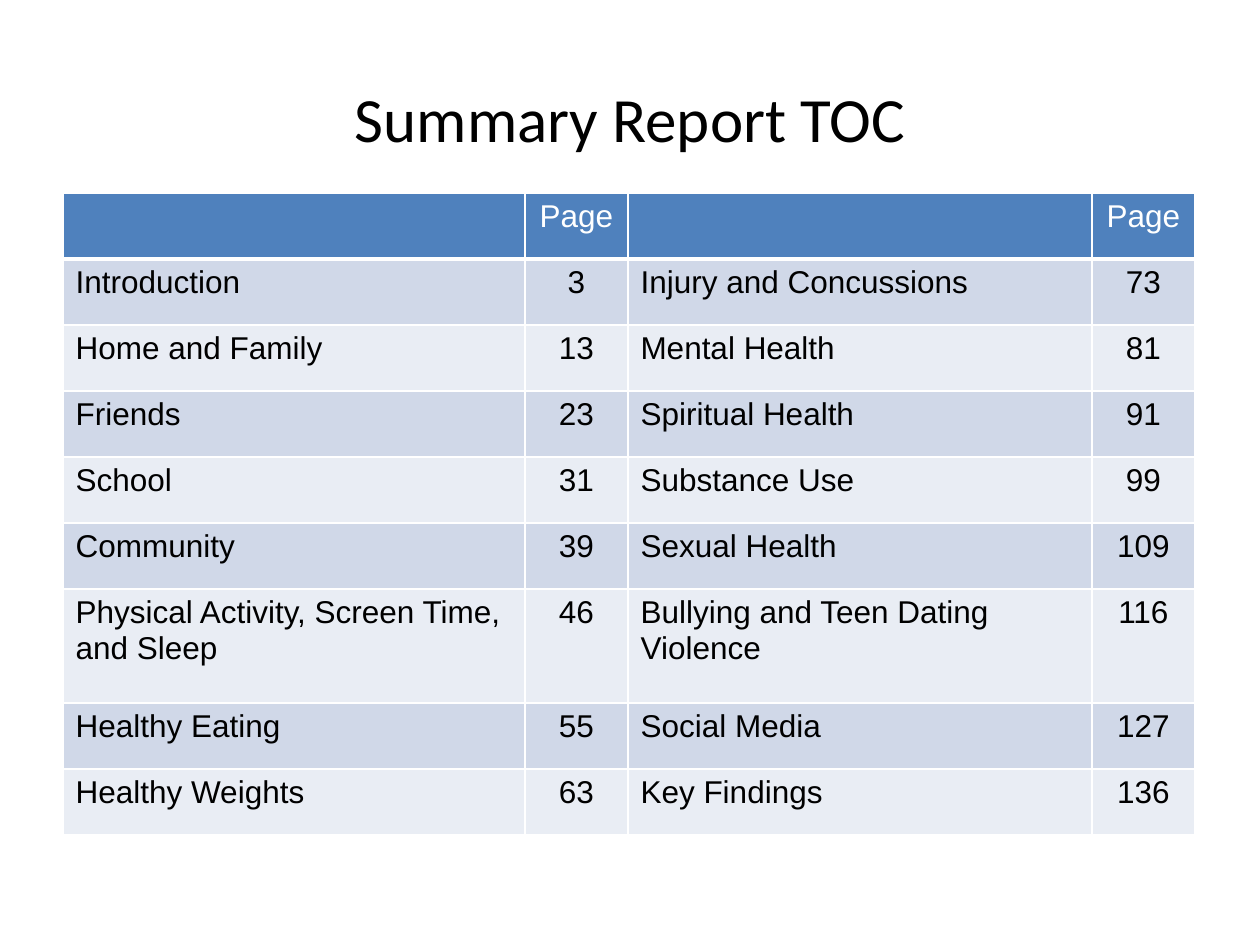
import pptx
import pptx.util
import pptx.dml.color
import pptx.enum.text
import pptx.oxml
import pptx.oxml.ns

RGB = pptx.dml.color.RGBColor
ALIGN = pptx.enum.text.PP_ALIGN
BLACK = RGB(0x00, 0x00, 0x00)
WHITE = RGB(0xFF, 0xFF, 0xFF)
BLUE = RGB(0x4F, 0x81, 0xBD)
BANDS = [RGB(0xD0, 0xD8, 0xE8), RGB(0xE9, 0xED, 0xF4)]

SCALE = 914400 / 126  # EMU in one px

COLS = [462, 103, 464, 103]
ROW = 66
TALL = 114
ROWS = [
    ("", "Page", "", "Page"),
    ("Introduction", "3", "Injury and Concussions", "73"),
    ("Home and Family", "13", "Mental Health", "81"),
    ("Friends", "23", "Spiritual Health", "91"),
    ("School", "31", "Substance Use", "99"),
    ("Community", "39", "Sexual Health", "109"),
    ("Physical Activity, Screen Time, and Sleep", "46",
     "Bullying and Teen Dating Violence", "116"),
    ("Healthy Eating", "55", "Social Media", "127"),
    ("Healthy Weights", "63", "Key Findings", "136"),
]


def px(num):
    return pptx.util.Emu(round(num * SCALE))


def write(frame, text, font="Arial", size=18, color=BLACK, align=ALIGN.LEFT):
    para = frame.paragraphs[0]
    para.alignment = align
    para.font.size = pptx.util.Pt(size)
    if not text:
        return
    run = para.add_run()
    run.text = text
    run.font.name = font
    run.font.size = pptx.util.Pt(size)
    run.font.color.rgb = color


def edge(cell, base):
    """Draw white cell borders; base is the bottom width in points."""
    props = cell._tc.get_or_add_tcPr()
    for side, width in (("L", 1), ("R", 1), ("T", 1), ("B", base)):
        props.append(pptx.oxml.parse_xml(
            f'<a:ln{side} {pptx.oxml.ns.nsdecls("a")} w="{width * 12700}">'
            f'<a:solidFill><a:srgbClr val="{WHITE}"/></a:solidFill>'
            f'</a:ln{side}>'))


def title(slide, left, top, width, height):
    box = slide.shapes.add_textbox(px(left), px(top), px(width), px(height))
    frame = box.text_frame
    frame.word_wrap = True
    frame.vertical_anchor = pptx.enum.text.MSO_ANCHOR.MIDDLE
    write(frame, "Summary Report TOC", font="Calibri", size=36,
          align=ALIGN.CENTER)


def contents(slide, left, top):
    highs = [TALL if "Sleep" in row[0] else ROW for row in ROWS]
    table = slide.shapes.add_table(
        len(ROWS), len(COLS), px(left), px(top),
        px(sum(COLS)), px(sum(highs))).table
    for col, width in zip(table.columns, COLS):
        col.width = px(width)
    for r, (row, high) in enumerate(zip(ROWS, highs)):
        table.rows[r].height = px(high)
        head = r == 0
        for c, text in enumerate(row):
            cell = table.cell(r, c)
            edge(cell, 3 if head else 1)
            cell.fill.solid()
            cell.fill.fore_color.rgb = BLUE if head else BANDS[(r - 1) % 2]
            write(cell.text_frame, text, color=WHITE if head else BLACK,
                  align=ALIGN.CENTER if c % 2 else ALIGN.LEFT)


def main():
    deck = pptx.Presentation()
    deck.slide_width, deck.slide_height = px(1260), px(945)
    slide = deck.slides.add_slide(deck.slide_layouts[6])
    # Table of contents, then the title above it
    contents(slide, 63, 193)
    title(slide, 63, 38, 1134, 158)
    deck.save("out.pptx")


if __name__ == "__main__":
    main()
